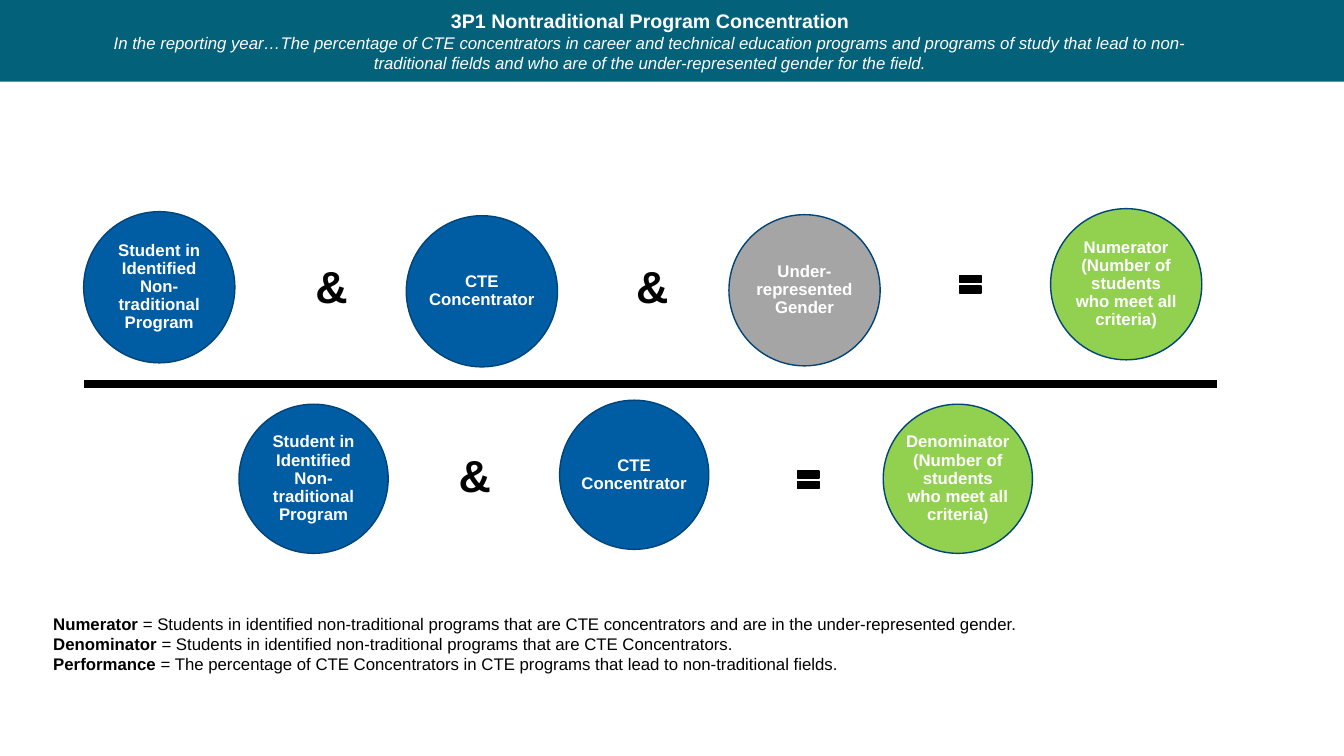
import pptx
import pptx.util
import pptx.dml.color
import pptx.enum.shapes
import pptx.enum.text
import pptx.oxml.ns
import lxml.etree

Inches, Pt = pptx.util.Inches, pptx.util.Pt
SHAPES = pptx.enum.shapes.MSO_SHAPE
ALIGN = pptx.enum.text.PP_ALIGN
ANCHOR = pptx.enum.text.MSO_ANCHOR

TEAL, BLUE, GRAY, GREEN = "03617A", "005CA3", "A5A5A5", "92D050"
OUTLINE, BLACK, WHITE = "004479", "000000", "FFFFFF"

STUDENT = "Student in Identified Non-traditional Program"
CONCENTRATOR = "CTE Concentrator"
CRITERIA = "(Number of students who meet all criteria)"

# left, top, diameter, fill, wording
CIRCLES = [
    (0.83, 2.1, 1.5, BLUE, STUDENT),
    (4.03, 2.14, 1.5, BLUE, CONCENTRATOR),
    (7.23, 2.13, 1.5, GRAY, "Under-represented Gender"),
    (10.42, 2.07, 1.5, GREEN, f"Numerator {CRITERIA}"),
    (2.37, 4.01, 1.48, BLUE, STUDENT),
    (5.55, 3.97, 1.48, BLUE, CONCENTRATOR),
    (8.76, 4.01, 1.48, GREEN, f"Denominator {CRITERIA}"),
]
AMPERSANDS = [(3.03, 2.52), (6.21, 2.52), (4.45, 4.39)]
EQUALS_SIGNS = [(9.48, 2.67), (7.87, 4.61)]
DEFINITIONS = [
    ("Numerator", "Students in identified non-traditional programs that are CTE "
                  "concentrators and are in the under-represented gender."),
    ("Denominator", "Students in identified non-traditional programs that are "
                    "CTE Concentrators."),
    ("Performance", "The percentage of CTE Concentrators in CTE programs that "
                    "lead to non-traditional fields."),
]


def rgb(value):
    return pptx.dml.color.RGBColor.from_string(value)


def add_run(paragraph, text, size, color, bold=False, italic=False):
    run = paragraph.add_run()
    run.text = text
    run.font.name = "Arial"
    run.font.size = Pt(size)
    run.font.bold = bold
    run.font.italic = italic
    run.font.color.rgb = rgb(color)


def add_filled_shape(slide, preset, left, top, width, height, fill, outline=None):
    shape = slide.shapes.add_shape(
        preset, Inches(left), Inches(top), Inches(width), Inches(height))
    shape.shadow.inherit = False
    shape.fill.solid()
    shape.fill.fore_color.rgb = rgb(fill)
    if outline:
        shape.line.color.rgb = rgb(outline)
        shape.line.width = Pt(1)
    else:
        shape.line.fill.background()
    return shape


def add_text_frame(slide, left, top, width, height):
    box = slide.shapes.add_textbox(
        Inches(left), Inches(top), Inches(width), Inches(height))
    box.text_frame.word_wrap = True
    return box.text_frame


def add_header(slide):
    add_filled_shape(slide, SHAPES.RECTANGLE, 0, 0, 13.33, 0.81, TEAL)
    frame = add_text_frame(slide, 0.7, 0, 11.5, 0.81)
    frame.vertical_anchor = ANCHOR.MIDDLE
    heading = frame.paragraphs[0]
    heading.alignment = ALIGN.CENTER
    add_run(heading, "3P1 Nontraditional Program Concentration", 14, WHITE, bold=True)
    heading.add_line_break()
    add_run(heading,
            "In the reporting year…The percentage of CTE concentrators in career "
            "and technical education programs and programs of study that lead to "
            "non-traditional fields and who are of the under-represented gender "
            "for the field.", 12, WHITE, italic=True)


def add_circle(slide, left, top, diameter, fill, wording):
    circle = add_filled_shape(
        slide, SHAPES.OVAL, left, top, diameter, diameter, fill, OUTLINE)
    frame = circle.text_frame
    frame.word_wrap = True
    frame.vertical_anchor = ANCHOR.MIDDLE
    frame.margin_left = frame.margin_right = Inches(0)
    frame.margin_top = frame.margin_bottom = Inches(0)
    label = frame.paragraphs[0]
    label.alignment = ALIGN.CENTER
    label.line_spacing = 0.9
    add_run(label, wording, 12, WHITE, bold=True)


def add_ampersand(slide, left, top):
    frame = add_text_frame(slide, left, top, 0.42, 0.64)
    add_run(frame.paragraphs[0], "&", 32, BLACK, bold=True)


def add_fraction_bar(slide):
    bar = slide.shapes.add_connector(
        pptx.enum.shapes.MSO_CONNECTOR.STRAIGHT,
        Inches(0.83), Inches(3.81), Inches(12.07), Inches(3.81))
    bar.line.color.rgb = rgb(BLACK)
    bar.line.width = Pt(6)
    properties = bar.element.find(pptx.oxml.ns.qn("p:spPr"))
    lxml.etree.SubElement(properties, pptx.oxml.ns.qn("a:effectLst"))


def add_definitions(slide):
    frame = add_text_frame(slide, 0.43, 6.04, 12.47, 0.71)
    for index, (term, meaning) in enumerate(DEFINITIONS):
        paragraph = frame.add_paragraph() if index else frame.paragraphs[0]
        add_run(paragraph, term, 12, BLACK, bold=True)
        add_run(paragraph, f" = {meaning}", 12, BLACK)


def main():
    deck = pptx.Presentation()
    deck.slide_width, deck.slide_height = Inches(13.33), Inches(7.5)
    slide = deck.slides.add_slide(deck.slide_layouts[6])
    add_header(slide)
    for circle in CIRCLES:
        add_circle(slide, *circle)
    for left, top in EQUALS_SIGNS:
        add_filled_shape(slide, SHAPES.MATH_EQUAL, left, top, 0.29, 0.3, BLACK, BLACK)
    add_fraction_bar(slide)
    add_definitions(slide)
    for left, top in AMPERSANDS:
        add_ampersand(slide, left, top)
    deck.save("out.pptx")


if __name__ == "__main__":
    main()
